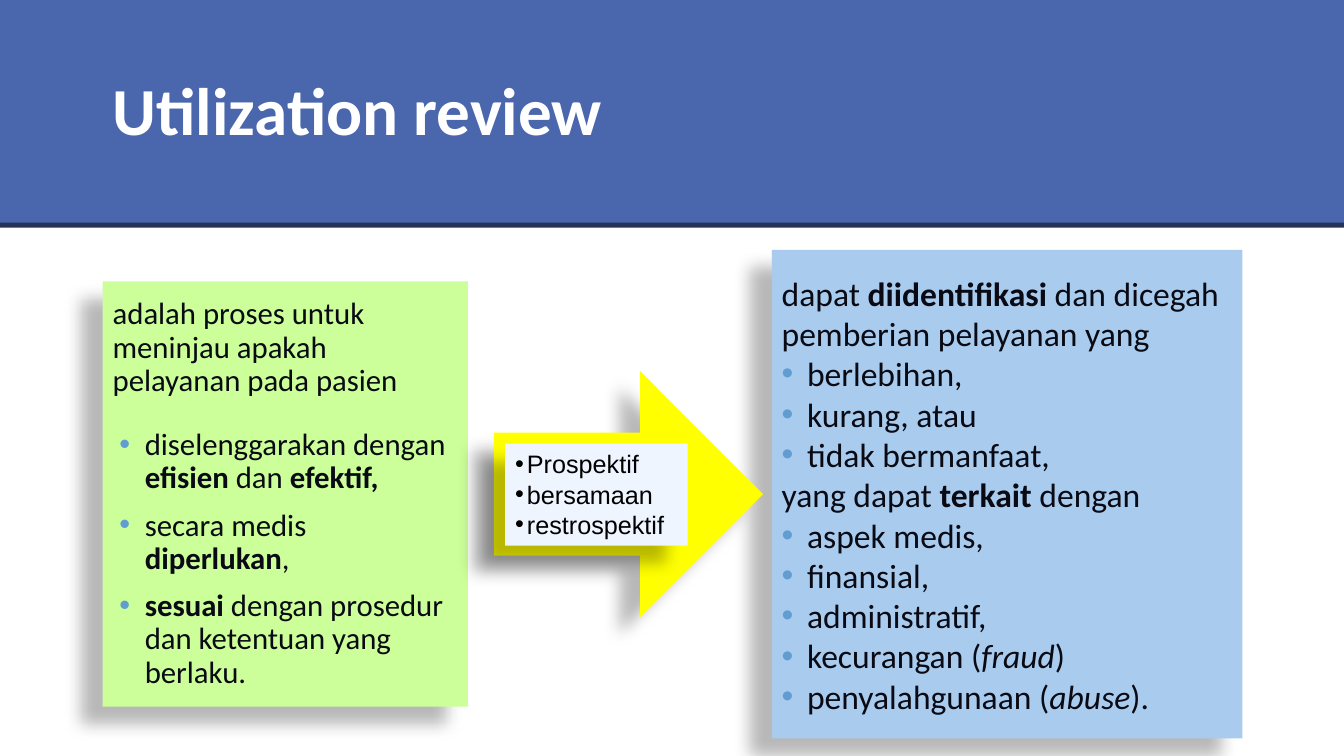
from dataclasses import dataclass

from lxml.etree import SubElement
from pptx import Presentation
from pptx.dml.color import RGBColor
from pptx.enum.shapes import MSO_SHAPE
from pptx.enum.text import MSO_ANCHOR, MSO_AUTO_SIZE, PP_ALIGN
from pptx.oxml.ns import qn
from pptx.util import Cm, Pt


@dataclass(frozen=True)
class Theme:
    band: str = "4A66AC"
    rule: str = "253356"
    white: str = "FFFFFF"
    ink: str = "090A14"
    black: str = "000000"
    dot: str = "629DD1"
    green: str = "CCFF99"
    blue: str = "A9CCEE"
    yellow: str = "FFFF00"
    pale: str = "EEF5FE"
    main: str = "Calibri"
    side: str = "Arial"
    title: int = 48
    left: int = 22
    right: int = 24
    label: int = 18


class Deck:
    def __init__(self, theme):
        self.theme = theme
        self.prs = Presentation()
        self.prs.slide_width, self.prs.slide_height = Cm(33.87), Cm(19.05)
        self.slide = self.prs.slides.add_slide(self.prs.slide_layouts[6])

    def shape(self, box, fill, kind=MSO_SHAPE.RECTANGLE, host=None, shade=False):
        shapes = (host or self.slide).shapes
        item = shapes.add_shape(kind, *map(Cm, box))
        item.fill.solid()
        item.fill.fore_color.rgb = RGBColor.from_string(fill)
        item.line.fill.background()
        item.shadow.inherit = False
        if shade:
            self.shade(item)
        return item

    def shade(self, item):
        effects = item._element.spPr.find(qn("a:effectLst"))
        shadow = SubElement(effects, qn("a:outerShdw"), blurRad=str(Pt(11.8)),
                            dist=str(Pt(19.7)), dir=str(141 * 60000),
                            algn="tl", rotWithShape="0")
        color = SubElement(shadow, qn("a:srgbClr"), val=self.theme.black)
        SubElement(color, qn("a:alpha"), val="28000")

    def box(self, box):
        return self.slide.shapes.add_textbox(*map(Cm, box))

    def bullet(self, para, indent, color):
        left, hang = indent
        props = para._p.get_or_add_pPr()
        props.set("marL", str(Cm(left)))
        props.set("indent", str(-Cm(hang)))
        if color:
            tint = SubElement(props, qn("a:buClr"))
            SubElement(tint, qn("a:srgbClr"), val=color)
        SubElement(props, qn("a:buFont"), typeface="Arial")
        SubElement(props, qn("a:buChar"), char="•")

    def text(self, item, lines, size, color, font, indent=(0, 0),
             dot=None, space=None, gap=0, anchor=MSO_ANCHOR.MIDDLE):
        """Lines led by "- " are bullets; pieces split by "|" are bold after "*", italic after "/"."""
        frame = item.text_frame
        frame.word_wrap = True
        frame.vertical_anchor = anchor
        for n, line in enumerate(lines):
            para = frame.add_paragraph() if n else frame.paragraphs[0]
            if line.startswith("- "):
                self.bullet(para, indent, dot)
            para.alignment = PP_ALIGN.LEFT
            para.line_spacing = space
            para.space_before = Pt(gap if n else 0)
            for piece in line.removeprefix("- ").split("|"):
                run = para.add_run()
                run.text = piece.lstrip("*/")
                run.font.size = Pt(size)
                run.font.name = font
                run.font.bold = piece.startswith("*")
                run.font.italic = piece.startswith("/")
                run.font.color.rgb = RGBColor.from_string(color)
        return frame


def main():
    theme = Theme()
    deck = Deck(theme)

    # Header band and title
    deck.shape((0, 0, 33.87, 5.69), theme.band)
    deck.shape((0, 5.61, 33.87, 0.13), theme.rule)
    deck.text(deck.box((2.59, 0.64, 29.06, 4.45)), ["*Utilization review"],
              theme.title, theme.white, theme.main, space=0.9)

    # Definition panel
    panel = deck.shape((2.59, 7.09, 9.2, 10.72), theme.green, shade=True)
    frame = deck.text(panel, [
        "adalah proses untuk meninjau apakah pelayanan pada pasien",
        "- diselenggarakan dengan |*efisien |dan |*efektif,",
        "- secara medis |*diperlukan|,",
        "- *sesuai |dengan prosedur dan ketentuan yang berlaku.",
    ], theme.left, theme.ink, theme.main, (0.81, 0.64), theme.dot, 0.9, 10)
    frame.paragraphs[0].space_after = Pt(12)

    # Findings panel
    panel = deck.shape((19.45, 6.3, 11.86, 12.31), theme.blue, shade=True)
    deck.text(panel, [
        "dapat |*diidentifikasi |dan dicegah",
        "pemberian pelayanan yang",
        "- berlebihan,",
        "- kurang, atau",
        "- tidak bermanfaat,",
        "yang dapat |*terkait |dengan",
        "- aspek medis,",
        "- finansial,",
        "- administratif,",
        "- kecurangan (|/fraud|)",
        "- penyalahgunaan (|/abuse|).",
    ], theme.right, theme.ink, theme.main, (0.64, 0.64), theme.dot)

    # Arrow with its label
    group = deck.slide.shapes.add_group_shape()
    deck.shape((12.45, 9.35, 6.78, 6.2), theme.yellow,
               MSO_SHAPE.RIGHT_ARROW, group, True)
    label = deck.shape((12.73, 11.18, 4.6, 2.57), theme.pale,
                       host=group, shade=True)
    frame = deck.text(label, ["- Prospektif", "- bersamaan", "- restrospektif"],
                      theme.label, theme.black, theme.side, (0.3, 0.3),
                      anchor=MSO_ANCHOR.TOP)
    frame.auto_size = MSO_AUTO_SIZE.SHAPE_TO_FIT_TEXT

    deck.prs.save("out.pptx")


if __name__ == "__main__":
    main()
